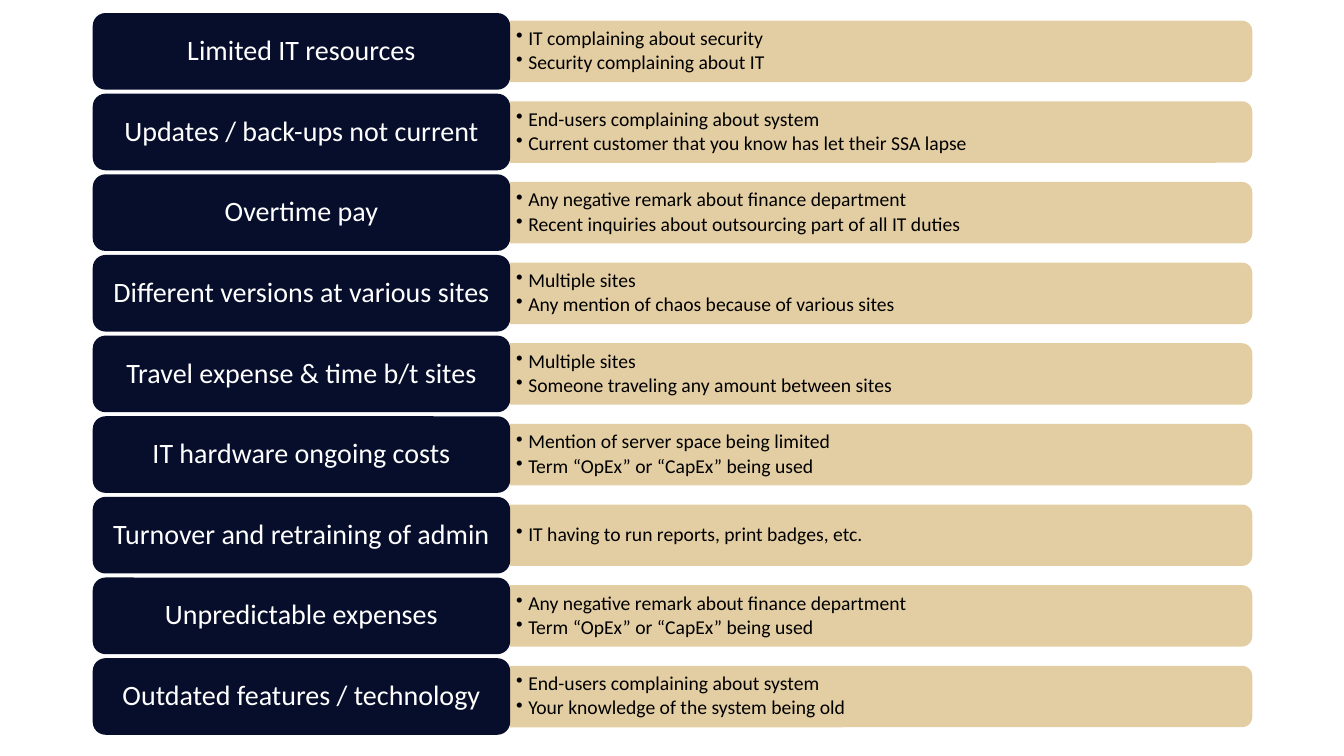
from dataclasses import dataclass

from lxml import etree
from pptx import Presentation
from pptx import util as u
from pptx.dml.color import RGBColor
from pptx.enum import shapes, text
from pptx.oxml.ns import qn
from pptx.shapes.autoshape import Shape
from pptx.slide import Slide

COLOURS = {"navy": "070E2B", "sand": "E3CEA3", "white": "FFFFFF", "black": "000000"}
FONT = "Calibri"

ROW_TOP, ROW_PITCH = 0.13, 0.8
LABEL_LEFT, LABEL_WIDTH, LABEL_HEIGHT = 0.92, 4.14, 0.76
BAR_LEFT, BAR_WIDTH, BAR_HEIGHT = LABEL_LEFT + LABEL_WIDTH, 7.36, 0.61
CLUES_WIDTH, CLUES_HEIGHT = 7.33, 0.55
BULLET_INDENT = 0.12


@dataclass(frozen=True)
class PainPoint:
    label: str
    clues: tuple[str, ...]


@dataclass(frozen=True)
class TextStyle:
    size: int
    colour: str
    align: text.PP_ALIGN
    space_after: float
    margin_x: float
    margin_y: float
    bulleted: bool = False


LABEL_STYLE = TextStyle(20, "white", text.PP_ALIGN.CENTER, 0, 0.11, 0.07)
CLUE_STYLE = TextStyle(14, "black", text.PP_ALIGN.LEFT, 2.1, 0.06, 0.03, bulleted=True)

PAIN_POINTS = (
    PainPoint("Limited IT resources",
              ("IT complaining about security", "Security complaining about IT")),
    PainPoint("Updates / back-ups not current",
              ("End-users complaining about system",
               "Current customer that you know has let their SSA lapse")),
    PainPoint("Overtime pay",
              ("Any negative remark about finance department",
               "Recent inquiries about outsourcing part of all IT duties")),
    PainPoint("Different versions at various sites",
              ("Multiple sites", "Any mention of chaos because of various sites")),
    PainPoint("Travel expense & time b/t sites",
              ("Multiple sites", "Someone traveling any amount between sites")),
    PainPoint("IT hardware ongoing costs",
              ("Mention of server space being limited",
               "Term “OpEx” or “CapEx” being used")),
    PainPoint("Turnover and retraining of admin",
              ("IT having to run reports, print badges, etc.",)),
    PainPoint("Unpredictable expenses",
              ("Any negative remark about finance department",
               "Term “OpEx” or “CapEx” being used")),
    PainPoint("Outdated features / technology",
              ("End-users complaining about system",
               "Your knowledge of the system being old")),
)


def apply_format(target: object, values: dict[str, object]) -> None:
    for name, value in values.items():
        setattr(target, name, value)


def add_bullet(para: object) -> None:
    properties = para._p.get_or_add_pPr()
    properties.set("marL", str(u.Inches(BULLET_INDENT)))
    properties.set("indent", str(-u.Inches(BULLET_INDENT)))
    etree.SubElement(properties, qn("a:buChar")).set("char", "•")


def write_lines(box: Shape, lines: tuple[str, ...], style: TextStyle) -> None:
    frame = box.text_frame
    margin_x, margin_y = u.Inches(style.margin_x), u.Inches(style.margin_y)
    apply_format(frame, {
        "word_wrap": True,
        "vertical_anchor": text.MSO_ANCHOR.MIDDLE,
        "margin_left": margin_x, "margin_right": margin_x,
        "margin_top": margin_y, "margin_bottom": margin_y,
    })
    for index, line in enumerate(lines):
        para = frame.add_paragraph() if index else frame.paragraphs[0]
        if style.bulleted:
            para.level = 1
            add_bullet(para)
        apply_format(para, {"alignment": style.align, "line_spacing": 0.9,
                            "space_after": u.Pt(style.space_after)})
        span = para.add_run()
        span.text = line
        apply_format(span.font, {"name": FONT, "size": u.Pt(style.size)})
        span.font.color.rgb = RGBColor.from_string(COLOURS[style.colour])


def add_filled_shape(page: Slide, preset: shapes.MSO_SHAPE, left: float, top: float,
                     width: float, height: float, colour: str) -> Shape:
    shape = page.shapes.add_shape(preset, u.Inches(left), u.Inches(top),
                                  u.Inches(width), u.Inches(height))
    shape.shadow.inherit = False
    shape.fill.solid()
    shape.fill.fore_color.rgb = RGBColor.from_string(COLOURS[colour])
    shape.line.fill.background()
    return shape


def add_row(page: Slide, point: PainPoint, top: float) -> None:
    """Draw a label with its bar of clues, both centred on one line."""
    middle = top + LABEL_HEIGHT / 2
    # The bar stands upright and is turned so that its rounded end faces right.
    bar = add_filled_shape(page, shapes.MSO_SHAPE.ROUND_2_SAME_RECTANGLE,
                           BAR_LEFT + (BAR_WIDTH - BAR_HEIGHT) / 2, middle - BAR_WIDTH / 2,
                           BAR_HEIGHT, BAR_WIDTH, "sand")
    bar.rotation = 90
    clues = page.shapes.add_textbox(u.Inches(BAR_LEFT), u.Inches(middle - CLUES_HEIGHT / 2),
                                    u.Inches(CLUES_WIDTH), u.Inches(CLUES_HEIGHT))
    write_lines(clues, point.clues, CLUE_STYLE)
    label = add_filled_shape(page, shapes.MSO_SHAPE.ROUNDED_RECTANGLE, LABEL_LEFT, top,
                             LABEL_WIDTH, LABEL_HEIGHT, "navy")
    write_lines(label, (point.label,), LABEL_STYLE)


def main() -> None:
    deck = Presentation()
    apply_format(deck, {"slide_width": u.Inches(13.33), "slide_height": u.Inches(7.5)})
    page = deck.slides.add_slide(deck.slide_layouts[6])
    for index, point in enumerate(PAIN_POINTS):
        add_row(page, point, ROW_TOP + index * ROW_PITCH)
    deck.save("out.pptx")


if __name__ == "__main__":
    main()
